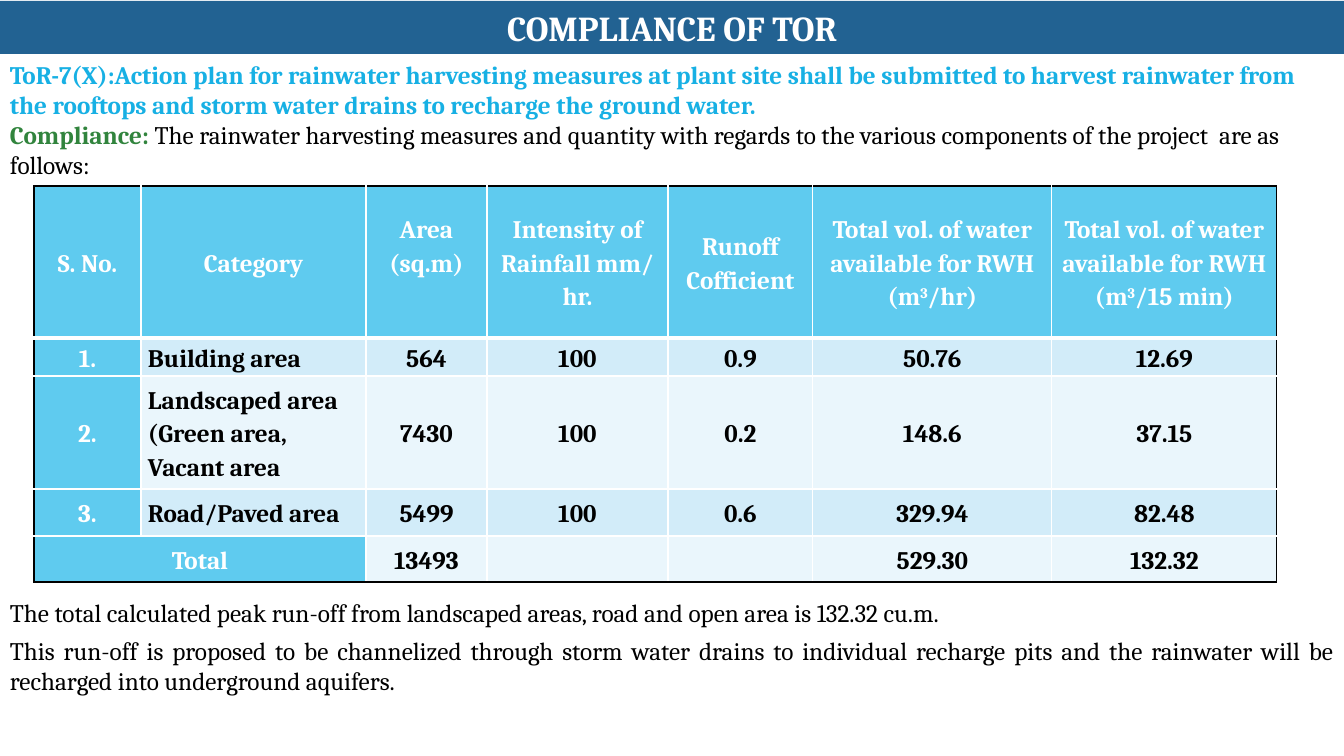
from pptx import Presentation
from pptx.dml.color import RGBColor
from pptx.enum.text import MSO_ANCHOR, MSO_AUTO_SIZE, PP_ALIGN
from pptx.oxml.ns import qn
from pptx.util import Pt
from lxml.etree import SubElement

PX = 12192000 / 1344
FONT = "Cambria"
WHITE = RGBColor(0xFF, 0xFF, 0xFF)
BLACK = RGBColor(0, 0, 0)
NAVY = RGBColor(0x22, 0x62, 0x92)
CYAN = RGBColor(0x17, 0xB0, 0xE4)
GREEN = RGBColor(0x31, 0x84, 0x3D)
SKY = RGBColor(0x5F, 0xCB, 0xEF)
BANDS = (RGBColor(0xEA, 0xF6, 0xFC), RGBColor(0xD2, 0xEC, 0xF9))

COLUMNS = (107, 225, 121, 181, 145, 239, 225)
ROWS = (152, 38, 113, 47, 46)
# A caret pair encloses superscript text.
VOLUME = "Total vol. of water available for RWH (m^3^/"
CELLS = (
    ("S. No.", "Category", "Area (sq.m)", "Intensity of Rainfall mm/ hr.",
     "Runoff Cofficient", VOLUME + "hr)", VOLUME + "15 min)"),
    ("1.", "Building area", "564", "100", "0.9", "50.76", "12.69"),
    ("2.", "Landscaped area (Green area, Vacant area", "7430", "100", "0.2",
     "148.6", "37.15"),
    ("3.", "Road/Paved area", "5499", "100", "0.6", "329.94", "82.48"),
    ("Total", "", "13493", "", "", "529.30", "132.32"),
)


def px(length):
    return round(length * PX)


def place(shape, left, top, width, height):
    shape.left, shape.top = px(left), px(top)
    shape.width, shape.height = px(width), px(height)


def style(font, size, color, bold=False):
    font.name, font.size, font.bold = FONT, Pt(size), bold
    font.color.rgb = color


def add_title(page, text):
    title = page.shapes.title
    place(title, 0, 1, 1344, 53)
    title.fill.solid()
    title.fill.fore_color.rgb = NAVY
    frame = title.text_frame
    frame.text = text
    frame.auto_size = MSO_AUTO_SIZE.NONE
    frame.vertical_anchor = MSO_ANCHOR.MIDDLE
    para = frame.paragraphs[0]
    para.alignment = PP_ALIGN.CENTER
    style(para.font, 25, WHITE, True)


def add_text(page, top, height, paragraphs, align, space_after):
    """Add a full-width box; each paragraph is a list of (text, color, bold)."""
    box = page.shapes.add_textbox(0, px(top), px(1344), px(height))
    frame = box.text_frame
    frame.word_wrap = True
    for index, spans in enumerate(paragraphs):
        para = frame.add_paragraph() if index else frame.paragraphs[0]
        para.alignment = align
        para.space_after = Pt(space_after)
        for text, color, bold in spans:
            span = para.add_run()
            span.text = text
            style(span.font, 18, color, bold)


def set_border(cell, side, color, points):
    line = SubElement(cell._tc.get_or_add_tcPr(), qn("a:ln" + side),
                      w=str(Pt(points)))
    fill = SubElement(line, qn("a:solidFill"))
    SubElement(fill, qn("a:srgbClr"), val=str(color))


def fill_cell(cell, text, row, column):
    last_row, last_column = len(ROWS) - 1, len(COLUMNS) - 1
    is_header = row == 0
    is_label = is_header or column == 0 or (row == last_row and column == 1)

    set_border(cell, "L", WHITE if column else BLACK, 1)
    set_border(cell, "R", BLACK if column == last_column else WHITE, 1)
    set_border(cell, "T", BLACK if is_header else WHITE, 3 if row == 1 else 1)
    set_border(cell, "B", BLACK if row == last_row else WHITE,
               3 if is_header else 1)
    cell.fill.solid()
    cell.fill.fore_color.rgb = SKY if is_label else BANDS[row % 2]

    cell.vertical_anchor = MSO_ANCHOR.MIDDLE
    cell.margin_left = cell.margin_right = px(7)
    cell.margin_top = 0
    cell.margin_bottom = px(34) if is_header and column == 2 else 0
    para = cell.text_frame.paragraphs[0]
    para.line_spacing = 1.15
    para.alignment = (PP_ALIGN.LEFT if column == 1 and not is_header
                      else PP_ALIGN.CENTER)
    style(para.font, 18, WHITE if is_label else BLACK, True)
    for index, part in enumerate(text.split("^") if text else ()):
        span = para.add_run()
        span.text = part
        if index % 2:
            span._r.get_or_add_rPr().set("baseline", "30000")


def add_rainwater_table(page):
    table = page.shapes.add_table(
        len(ROWS), len(COLUMNS), px(34), px(186),
        px(sum(COLUMNS)), px(sum(ROWS))).table
    for column, width in zip(table.columns, COLUMNS):
        column.width = px(width)
    for row, height in zip(table.rows, ROWS):
        row.height = px(height)
    for row, texts in enumerate(CELLS):
        for column, text in enumerate(texts):
            fill_cell(table.cell(row, column), text, row, column)
    total_row = len(ROWS) - 1
    table.cell(total_row, 0).merge(table.cell(total_row, 1))


def main():
    deck = Presentation()
    deck.slide_width, deck.slide_height = px(1344), px(756)
    page = deck.slides.add_slide(deck.slide_layouts[5])
    add_title(page, "COMPLIANCE OF TOR")
    add_text(page, 54, 132, [
        [("ToR-7(X):Action plan for rainwater harvesting measures at plant "
          "site shall be submitted to harvest rainwater from the rooftops and "
          "storm water drains to recharge the ground water.", CYAN, True)],
        [("Compliance: ", GREEN, True),
         ("The rainwater harvesting measures and quantity with regards to the "
          "various components of the project  are as follows:", BLACK, False)],
    ], PP_ALIGN.LEFT, 0)
    add_rainwater_table(page)
    add_text(page, 592, 110, [
        [("The total calculated peak run-off from landscaped areas, road and "
          "open area is 132.32 cu.m.", BLACK, False)],
        [("This run-off is proposed to be channelized through storm water "
          "drains to individual recharge pits and the rainwater will be "
          "recharged into underground aquifers.", BLACK, False)],
    ], PP_ALIGN.JUSTIFY, 6)
    deck.save("out.pptx")


if __name__ == "__main__":
    main()
